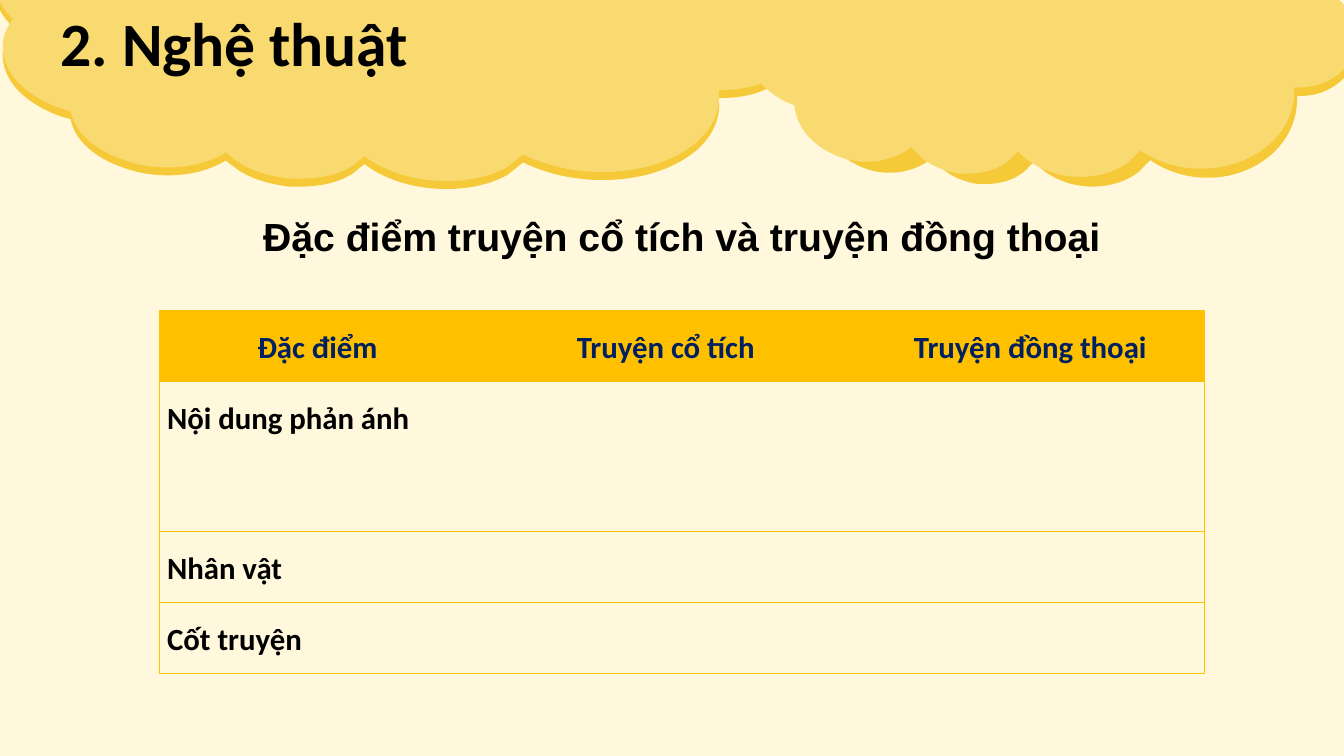
import math

from lxml import etree
from pptx import Presentation
from pptx import util as u
from pptx.dml.color import RGBColor
from pptx.enum import text
from pptx.oxml.ns import qn

Pt = u.Pt
COLORS = {"cream": "FFF8DC", "cloud": "F9DA70", "cloud_edge": "F6C938",
          "gold": "FFC000", "navy": "002060", "black": "000000"}
NO_STYLE = "{2D5ABB26-0587-4C30-8999-92F81FD0307C}"

# Widest cloud as it hangs, in hundredths of an inch: 2 numbers are a line, 6 a curve.
CLOUD_START = (-4, 1)
CLOUD = [
    (758, 1), (755, 4), (781, 17, 795, 38, 789, 58), (783, 82, 751, 98, 714, 97),
    (713, 98), (716, 122, 702, 145, 675, 160), (633, 184, 568, 185, 519, 161),
    (504, 173), (466, 195, 400, 192, 362, 163), (361, 163), (350, 172),
    (336, 181, 318, 185, 298, 185), (295, 185, 291, 185, 287, 185),
    (269, 183, 251, 178, 237, 169), (225, 160), (224, 159),
    (197, 176, 154, 179, 119, 165), (92, 155, 74, 138, 70, 118), (59, 115),
    (33, 105, 13, 90, 6, 71), (0, 56, 2, 40, 13, 27), (7, 21, 3, 16, 0, 10),
]
CLOUD_CENTRE, CLOUD_SIZE, CLOUD_TURN = (389, 81), (796, 224), 185
# Each cloud: colour, box in pt, rotation.
CLOUDS = [
    ("cloud_edge", -6.5, -22.3, 573.1, 161.3, 185),
    ("cloud", -6.5, -28, 573.1, 161.3, 185),
    ("cloud_edge", 547.2, -23.8, 418.3, 161.3, 186.9),
    ("cloud", 525.6, -31, 439.9, 161.3, 186.9),
]
HEADERS = ["Đặc điểm", "Truyện cổ tích", "Truyện đồng thoại"]
FEATURES = ["Nội dung phản ánh", "Nhân vật", "Cốt truyện"]


def rgb(name):
    return RGBColor.from_string(COLORS[name])


def upright(x, y):
    """Turn a point of the hanging cloud back into its unrotated box, as fractions."""
    turn = math.radians(CLOUD_TURN)
    dx, dy = x - CLOUD_CENTRE[0], y - CLOUD_CENTRE[1]
    across = dx * math.cos(turn) + dy * math.sin(turn)
    down = dy * math.cos(turn) - dx * math.sin(turn)
    return 0.5 + across / CLOUD_SIZE[0], 0.5 + down / CLOUD_SIZE[1]


def add_cloud(slide, color, x, y, w, h, rotation):
    builder = slide.shapes.build_freeform(Pt(x), Pt(y))
    builder.add_line_segments([(Pt(x + w), Pt(y)), (Pt(x + w), Pt(y + h)),
                               (Pt(x), Pt(y + h))], close=True)
    sp = builder.convert_to_shape()
    outline = next(sp.element.iter(qn("a:path")))
    for child in list(outline):
        outline.remove(child)

    def add_step(tag, numbers=()):
        step = etree.SubElement(outline, qn("a:" + tag))
        for px, py in zip(numbers[::2], numbers[1::2]):
            fx, fy = upright(px, py)
            etree.SubElement(step, qn("a:pt"), x=str(Pt(fx * w)), y=str(Pt(fy * h)))

    add_step("moveTo", CLOUD_START)
    for seg in CLOUD:
        add_step("lnTo" if len(seg) == 2 else "cubicBezTo", seg)
    add_step("close")
    sp.rotation = rotation
    sp.shadow.inherit = False
    sp.fill.solid()
    sp.fill.fore_color.rgb = rgb(color)
    sp.line.fill.background()


def add_run(p, words, size, font, color="black"):
    r = p.add_run()
    r.text = words
    r.font.size, r.font.name, r.font.bold = Pt(size), font, True
    r.font.color.rgb = rgb(color)


def place_title(slide, words, x, y, w, h):
    title = slide.shapes.title
    title.left, title.top, title.width, title.height = Pt(x), Pt(y), Pt(w), Pt(h)
    tf = title.text_frame
    tf.word_wrap = True
    tf.auto_size = text.MSO_AUTO_SIZE.SHAPE_TO_FIT_TEXT
    tf.vertical_anchor = text.MSO_ANCHOR.TOP
    tf.paragraphs[0].alignment = text.PP_ALIGN.LEFT
    add_run(tf.paragraphs[0], words, 44, "Calibri")
    slide.shapes.element.append(title.element)  # in front of the clouds


def add_heading(slide, words, x, y, w, h):
    tf = slide.shapes.add_textbox(Pt(x), Pt(y), Pt(w), Pt(h)).text_frame
    tf.word_wrap = False
    tf.auto_size = text.MSO_AUTO_SIZE.SHAPE_TO_FIT_TEXT
    tf.vertical_anchor = text.MSO_ANCHOR.MIDDLE
    tf.paragraphs[0].alignment = text.PP_ALIGN.CENTER
    add_run(tf.paragraphs[0], words, 28, "Arial")


def set_borders(cell, sides):
    """Draw a thin gold line on the given sides (of L, R, T, B) and none elsewhere."""
    tcPr = cell._tc.get_or_add_tcPr()
    for side in "LRTB":
        ln = etree.SubElement(tcPr, qn("a:ln" + side), w=str(Pt(0.5)))
        if side in sides:
            fill = etree.SubElement(ln, qn("a:solidFill"))
            etree.SubElement(fill, qn("a:srgbClr"), val=COLORS["gold"])
        else:
            etree.SubElement(ln, qn("a:noFill"))


def add_comparison(slide, x, y, widths, heights):
    frame = slide.shapes.add_table(len(heights), len(widths), Pt(x), Pt(y),
                                   Pt(sum(widths)), Pt(sum(heights)))
    table = frame.table
    table.horz_banding = False
    table._tbl.tblPr.find(qn("a:tableStyleId")).text = NO_STYLE
    for col, width in zip(table.columns, widths):
        col.width = Pt(width)
    rows = [HEADERS] + [[name, "", ""] for name in FEATURES]
    for i, (height, row) in enumerate(zip(heights, rows)):
        table.rows[i].height = Pt(height)
        for j, words in enumerate(row):
            cell = table.cell(i, j)
            cell.margin_left = cell.margin_right = Pt(5.4)
            cell.margin_top = cell.margin_bottom = 0
            set_borders(cell, "TB" + {0: "L", len(row) - 1: "R"}.get(j, ""))
            if i == 0:
                cell.fill.solid()
                cell.fill.fore_color.rgb = rgb("gold")
            else:
                cell.fill.background()
            if words:
                p = cell.text_frame.paragraphs[0]
                p.alignment = text.PP_ALIGN.JUSTIFY if i else text.PP_ALIGN.CENTER
                p.line_spacing = 1.5
                add_run(p, words, 22, "Calibri", "black" if i else "navy")


def main():
    prs = Presentation()
    prs.slide_width, prs.slide_height = Pt(960), Pt(540)
    slide = prs.slides.add_slide(prs.slide_layouts[5])
    slide.background.fill.solid()
    slide.background.fill.fore_color.rgb = rgb("cream")
    for cloud in CLOUDS:
        add_cloud(slide, *cloud)
    place_title(slide, "2. Nghệ thuật", 36, 0, 407.5, 60.5)
    add_comparison(slide, 114, 221.8, [225.4, 272.2, 248.6], [50.7, 107.1, 50.7, 50.7])
    add_heading(slide, "Đặc điểm truyện cổ tích và truyện đồng thoại", 177, 148, 620, 41)
    prs.save("out.pptx")


if __name__ == "__main__":
    main()
